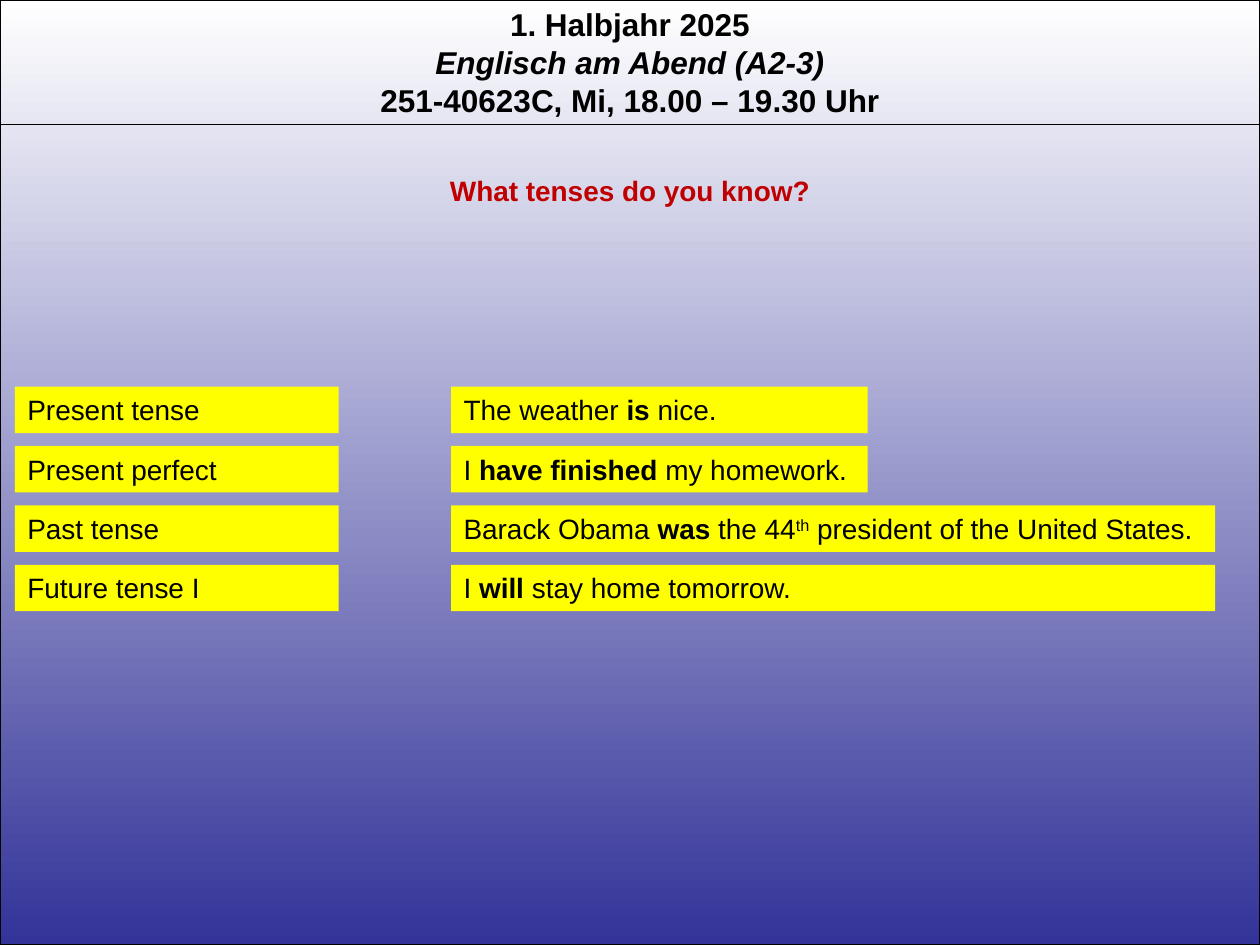
"""Build a slide that lists English tenses with an example of each."""
import pptx
import pptx.util
import pptx.dml.color
import pptx.enum.shapes
import pptx.enum.text
import pptx.oxml

Pt = pptx.util.Pt
RECT = pptx.enum.shapes.MSO_SHAPE.RECTANGLE
ALIGN = pptx.enum.text.PP_ALIGN

HUES = {"ink": "000000", "top": "FFFFFF", "base": "333399", "title": "C00000", "card": "FFFF00"}
WIDE, HIGH = 720, 540
HEAD = [
    [("1. Halbjahr 2025", "b")],
    [("Englisch am Abend (A2-3)", "bi")],
    [("251-40623C, Mi, 18.00 – 19.30 Uhr", "b")],
]
TITLE = [[("What tenses do you know?", "b")]]
ROWS = [
    ("Present tense", 238, [("The weather ", ""), ("is", "b"), (" nice.", "")]),
    ("Present perfect", 238, [("I ", ""), ("have finished ", "b"), ("my homework.", "")]),
    ("Past tense", 436.5, [("Barack Obama ", ""), ("was", "b"), (" the 44", ""), ("th", "s"),
                           (" president of the United States.", "")]),
    ("Future tense I", 436.5, [("I ", ""), ("will ", "b"), ("stay home tomorrow.", "")]),
]
TERM_X, TERM_W, CASE_X = 8.6, 185, 257.8
ROW_Y, STEP, ROW_H = 220.9, 33.95, 26.6


def hue(name):
    return pptx.dml.color.RGBColor.from_string(HUES[name])


def write(shape, paras, size, ink="ink", align=ALIGN.LEFT):
    frame = shape.text_frame
    frame.word_wrap = True
    frame.vertical_anchor = pptx.enum.text.MSO_ANCHOR.TOP
    for i, runs in enumerate(paras):
        para = frame.add_paragraph() if i else frame.paragraphs[0]
        para.alignment = align
        for text, style in runs:
            run = para.add_run()
            run.text = text
            font = run.font
            font.name, font.size = "Arial", Pt(size)
            font.bold, font.italic = "b" in style, "i" in style
            font.color.rgb = hue(ink)
            if "s" in style:
                run._r.get_or_add_rPr().set("baseline", "30000")


def label(slide, y, high, paras, size, ink="ink"):
    box = slide.shapes.add_textbox(0, Pt(y), Pt(WIDE), Pt(high))
    write(box, paras, size, ink, ALIGN.CENTER)


def card(slide, x, y, wide, runs):
    box = slide.shapes.add_shape(RECT, Pt(x), Pt(y), Pt(wide), Pt(ROW_H))
    box.shadow.inherit = False
    box.fill.solid()
    box.fill.fore_color.rgb = hue("card")
    box.line.fill.background()
    write(box, [runs], 16)


def stage(slide):
    back = slide.shapes.add_shape(RECT, 0, 0, Pt(WIDE), Pt(HIGH))
    back.shadow.inherit = False
    back.fill.gradient()
    back.fill.gradient_angle = 270
    for stop, name, place in zip(back.fill.gradient_stops, ("top", "base"), (0, 1)):
        stop.color.rgb = hue(name)
        stop.position = place
    back.line.color.rgb = hue("ink")
    back.line.width = Pt(0.75)


def rule(slide, y):
    kind = pptx.enum.shapes.MSO_CONNECTOR.STRAIGHT
    line = slide.shapes.add_connector(kind, 0, Pt(y), Pt(WIDE), Pt(y))
    line.line.color.rgb = hue("ink")
    line.line.width = Pt(0.75)
    line._element.spPr.append(pptx.oxml.parse_xml(
        '<a:effectLst xmlns:a="http://schemas.openxmlformats.org/drawingml/2006/main"/>'))


def main():
    deck = pptx.Presentation()
    deck.slide_width, deck.slide_height = Pt(WIDE), Pt(HIGH)
    slide = deck.slides.add_slide(deck.slide_layouts[6])
    stage(slide)
    label(slide, -0.7, 72, HEAD, 18)
    rule(slide, 71.3)
    label(slide, 95.8, ROW_H, TITLE, 16, "title")
    for i, (term, wide, case) in enumerate(ROWS):
        y = ROW_Y + i * STEP
        card(slide, TERM_X, y, TERM_W, [(term, "")])
        card(slide, CASE_X, y, wide, case)
    deck.save("out.pptx")


if __name__ == "__main__":
    main()
